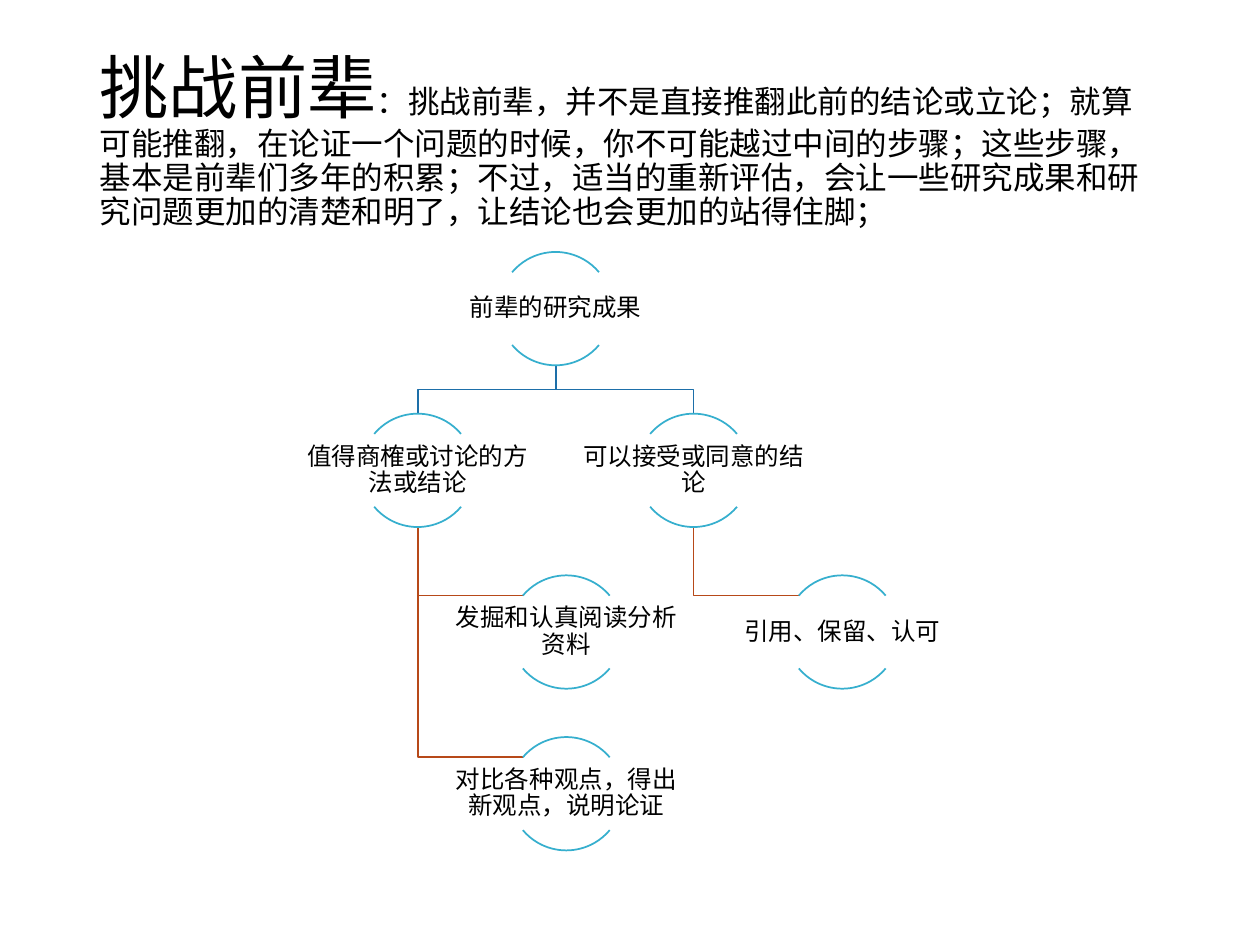
from math import cos, radians, sin

from pptx import Presentation
from pptx.dml.color import RGBColor
from pptx.enum.shapes import MSO_SHAPE
from pptx.enum.text import MSO_ANCHOR, MSO_AUTO_SIZE, PP_ALIGN
from pptx.util import Inches, Pt

FONT = "Times New Roman"
BLACK, ARC_BLUE, TRUNK_BLUE, BRANCH_RUST = "000000", "36AFCE", "1D6FA9", "B74919"

# Tree measures in inches
DISC = 0.9
LABEL_WIDTH, LABEL_HEIGHT = 1.81, 0.58
INDENT = 1.18
ARC_ANGLES = [(220, 320), (40, 140)]

TITLE = "挑战前辈"
EXPLANATION = (
    "：挑战前辈，并不是直接推翻此前的结论或立论；就算可能推翻，"
    "在论证一个问题的时候，你不可能越过中间的步骤；这些步骤，"
    "基本是前辈们多年的积累；不过，适当的重新评估，"
    "会让一些研究成果和研究问题更加的清楚和明了，"
    "让结论也会更加的站得住脚；"
)
ROOT = "前辈的研究成果"
BRANCHES = [
    ("值得商榷或讨论的方法或结论",
     ["发掘和认真阅读分析资料", "对比各种观点，得出新观点，说明论证"]),
    ("可以接受或同意的结论", ["引用、保留、认可"]),
]


def colour(value):
    return RGBColor.from_string(value)


def style_line(shape, value):
    shape.shadow.inherit = False
    shape.fill.background()
    shape.line.color.rgb = colour(value)
    shape.line.width = Pt(1)


def write(frame, spans, align, margins):
    """Fill a frame with one paragraph of (text, size) spans."""
    frame.word_wrap = True
    frame.auto_size = MSO_AUTO_SIZE.NONE
    frame.vertical_anchor = MSO_ANCHOR.MIDDLE
    frame.margin_left = frame.margin_right = Inches(margins[0])
    frame.margin_top = frame.margin_bottom = Inches(margins[1])
    para = frame.paragraphs[0]
    para.alignment = align
    para.line_spacing = 0.9
    for text, size in spans:
        span = para.add_run()
        span.text = text
        span.font.name = FONT
        span.font.size = Pt(size)
        span.font.color.rgb = colour(BLACK)


def place_title(page, box):
    title = page.shapes.title
    title.left, title.top, title.width, title.height = map(Inches, box)
    write(title.text_frame, [(TITLE, 39.6), (EXPLANATION, 18)],
          PP_ALIGN.LEFT, (0.1, 0.05))


def draw_link(page, points, value):
    start, *others = [(Inches(x), Inches(y)) for x, y in points]
    builder = page.shapes.build_freeform(*start)
    builder.add_line_segments(others, close=False)
    style_line(builder.convert_to_shape(), value)


def draw_node(page, center, top, text):
    """Draw a label between an upper and a lower arc."""
    for angles in ARC_ANGLES:
        arc = page.shapes.add_shape(
            MSO_SHAPE.ARC, Inches(center - DISC / 2), Inches(top),
            Inches(DISC), Inches(DISC))
        for index, angle in enumerate(angles):
            arc.adjustments[index] = angle * 0.6  # 60000ths of a degree
        style_line(arc, ARC_BLUE)
    label = page.shapes.add_textbox(
        Inches(center - LABEL_WIDTH / 2),
        Inches(top + (DISC - LABEL_HEIGHT) / 2),
        Inches(LABEL_WIDTH), Inches(LABEL_HEIGHT))
    write(label.text_frame, [(text, 14)], PP_ALIGN.CENTER, (0.01, 0.01))


def draw_tree(page, box):
    left, top, width, height = box
    row = (height - DISC) / 3
    column = width - LABEL_WIDTH - INDENT
    first = left + LABEL_WIDTH / 2
    root = first + column / 2
    middle = top + (DISC + row) / 2
    branch_top = top + row
    # Where a branch line meets the left end of a child's upper arc
    arc_x = DISC / 2 * cos(radians(40))
    arc_y = DISC / 2 * (1 - sin(radians(40)))

    nodes = [(root, top, ROOT)]
    for number, (branch, leaves) in enumerate(BRANCHES):
        center = first + number * column
        nodes.append((center, branch_top, branch))
        draw_link(page, [(root, top + DISC), (root, middle),
                         (center, middle), (center, branch_top)], TRUNK_BLUE)
        for level, leaf in enumerate(leaves, 2):
            leaf_top = top + level * row
            nodes.append((center + INDENT, leaf_top, leaf))
            draw_link(page, [(center, branch_top + DISC),
                             (center, leaf_top + arc_y),
                             (center + INDENT - arc_x, leaf_top + arc_y)],
                      BRANCH_RUST)
    # Nodes lie above the links
    for node in nodes:
        draw_node(page, *node)


def main():
    deck = Presentation()
    deck.slide_width, deck.slide_height = Inches(10), Inches(7.5)
    page = deck.slides.add_slide(deck.slide_layouts.get_by_name("Title Only"))
    place_title(page, (0.69, 0.4, 8.62, 1.45))
    draw_tree(page, (2.41, 2, 5.18, 4.75))
    deck.save("out.pptx")


if __name__ == "__main__":
    main()
